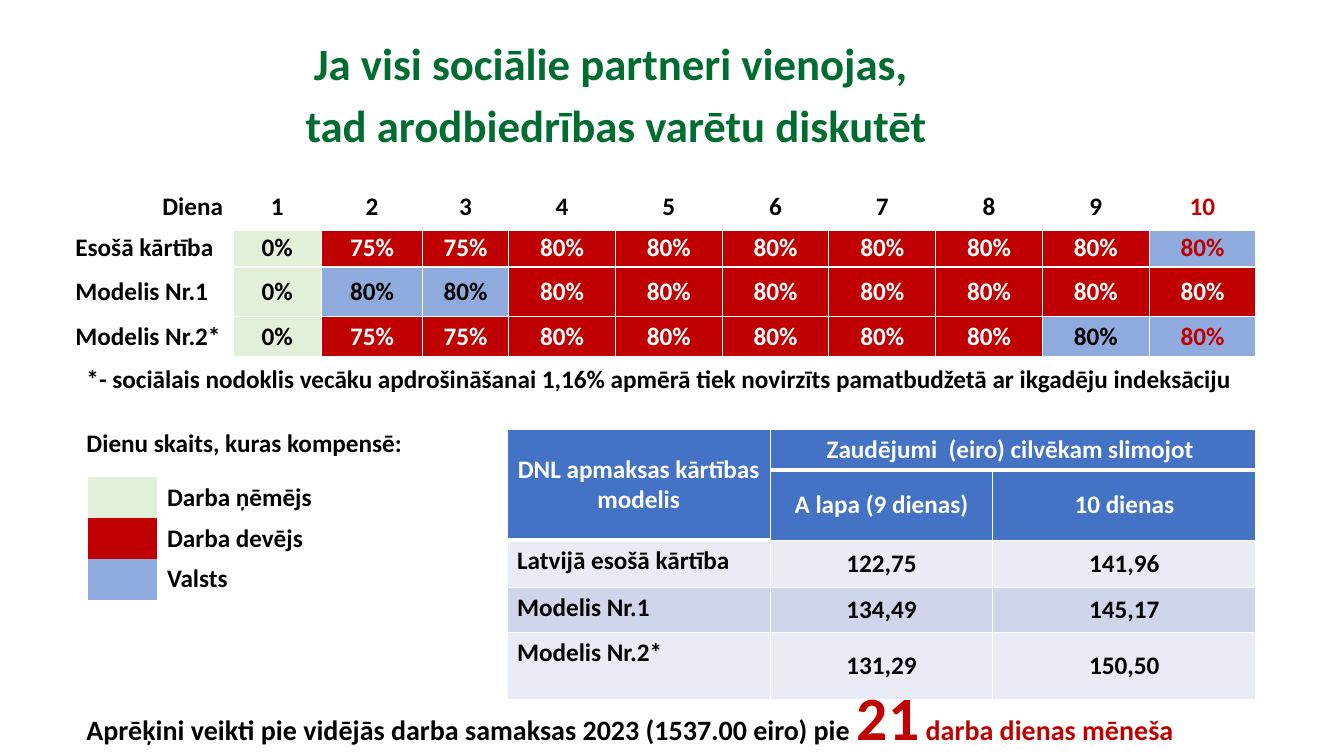
from dataclasses import dataclass

from lxml import etree
from pptx import Presentation
from pptx.dml.color import RGBColor
from pptx.enum.text import MSO_ANCHOR, PP_ALIGN
from pptx.oxml.ns import qn
from pptx.util import Cm, Pt

LEFT, CENTER, RIGHT = PP_ALIGN.LEFT, PP_ALIGN.CENTER, PP_ALIGN.RIGHT
TOP, MIDDLE = MSO_ANCHOR.TOP, MSO_ANCHOR.MIDDLE
PLAIN = "{2D5ABB26-0587-4C30-8999-92F81FD0307C}"  # table style without grid


@dataclass(frozen=True)
class Theme:
    font: str = "Calibri"
    title: int = 32
    body: int = 18
    note: int = 20
    huge: int = 44
    black: str = "000000"
    white: str = "FFFFFF"
    green: str = "006C31"
    red: str = "C00000"
    mint: str = "E2F0D9"
    sky: str = "8FAADC"
    blue: str = "4472C4"
    pale: str = "E9EBF5"
    band: str = "CFD5EA"


THEME = Theme()


def write(frame, text, size=THEME.body, color=THEME.black, align=LEFT, space=None):
    """Append text to the frame's last paragraph; a line break starts a new one."""
    for index, line in enumerate(text.split("\n")):
        para = frame.add_paragraph() if index else frame.paragraphs[-1]
        para.alignment = align
        if space:
            para.line_spacing = space
        run = para.add_run()
        run.text = line
        font = run.font
        font.name, font.size, font.bold = THEME.font, Pt(size), True
        font.color.rgb = RGBColor.from_string(color)


class Board:
    def __init__(self, slide, theme):
        self.slide, self.theme = slide, theme

    def box(self, left, top, width, height, wrap=True):
        shape = self.slide.shapes.add_textbox(Cm(left), Cm(top), Cm(width), Cm(height))
        shape.text_frame.word_wrap = wrap
        return shape.text_frame

    def table(self, left, top, cols, rows):
        frame = self.slide.shapes.add_table(
            len(rows), len(cols), Cm(left), Cm(top), Cm(sum(cols)), Cm(sum(rows)))
        table = frame.table
        table.first_row = table.horz_banding = False
        table._tbl.tblPr.find(qn("a:tableStyleId")).text = PLAIN
        for col, width in zip(table.columns, cols):
            col.width = Cm(width)
        for row, height in zip(table.rows, rows):
            row.height = Cm(height)
        return table

    def cell(self, cell, text="", fill=None, anchor=MIDDLE, lines=None, **style):
        cell.vertical_anchor = anchor
        cell.margin_left = cell.margin_right = Cm(0.25)
        cell.margin_top = cell.margin_bottom = Cm(0.13 if anchor == TOP else 0.05)
        for side, width in (lines or {}).items():
            self.edge(cell, side, width)
        if fill:
            cell.fill.solid()
            cell.fill.fore_color.rgb = RGBColor.from_string(fill)
        if text:
            write(cell.text_frame, text, **style)

    def edge(self, cell, side, width):
        props = cell._tc.get_or_add_tcPr()
        line = etree.SubElement(props, qn("a:ln" + side), w=str(Pt(width)))
        paint = etree.SubElement(line, qn("a:solidFill"))
        etree.SubElement(paint, qn("a:srgbClr"), val=self.theme.white)


def grid(row, low=1):
    """White cell edges; only the first row has its own top edge."""
    lines = {"L": 1, "R": 1}
    if row == 0:
        lines["T"] = 1
    lines["B"] = low
    return lines


def days(board):
    look = board.theme
    fills = {"g": look.mint, "r": look.red, "b": look.sky}
    rates = [0, 75, 75] + [80] * 7
    models = [
        ("Esošā kārtība", rates, "grrrrrrrrb"),
        ("Modelis Nr.1", [0] + [80] * 9, "gbbrrrrrrr"),
        ("Modelis Nr.2*", rates, "grrrrrrrbb"),
    ]
    table = board.table(1.65, 4.7, [4.22, 2.23, 2.55, 2.17] + [2.69] * 7,
                        [1.07, 0.96, 1.25, 1.0])

    # Day numbers
    for col in range(11):
        board.cell(table.cell(0, col), str(col) if col else "Diena", look.white, TOP,
                   grid(0, 3), align=CENTER if col else RIGHT,
                   color=look.red if col == 10 else look.black)

    # Pay rate per day, filled by who pays
    for row, (name, pay, codes) in enumerate(models, 1):
        board.cell(table.cell(row, 0), name, look.white, lines=grid(row))
        for col, (rate, code) in enumerate(zip(pay, codes), 1):
            if code == "r":
                color = look.white
            else:
                color = look.red if col == 10 else look.black
            board.cell(table.cell(row, col), f"{rate}%", fills[code],
                       lines=grid(row), align=CENTER, color=color)


def legend(board):
    look = board.theme
    payers = [("Darba ņēmējs", look.mint), ("Darba devējs", look.red),
              ("Valsts", look.sky)]
    table = board.table(2.21, 12.02, [1.75, 4.19], [1.03] * 3)
    for row, (name, fill) in enumerate(payers):
        board.cell(table.cell(row, 0), fill=fill)
        board.cell(table.cell(row, 1), name, anchor=TOP)


def losses(board):
    look = board.theme
    table = board.table(12.78, 10.82, [6.63, 5.61, 6.63],
                        [1.02, 1.77, 1.19, 1.13, 1.7])

    # Header with merged cells
    heads = [("DNL apmaksas kārtības modelis", "Zaudējumi  (eiro) cilvēkam slimojot ", ""),
             ("", "A lapa (9 dienas)", "10 dienas")]
    for row, texts in enumerate(heads):
        for col, text in enumerate(texts):
            low = 3 if row == 0 or col == 0 else 1
            board.cell(table.cell(row, col), text, look.blue, lines=grid(row, low),
                       align=CENTER, color=look.white)
    table.cell(0, 0).merge(table.cell(1, 0))
    table.cell(0, 1).merge(table.cell(0, 2))

    # Losses in euro
    sums = [("Latvijā esošā kārtība", "122,75", "141,96"),
            ("Modelis Nr.1", "134,49", "145,17"),
            ("Modelis Nr.2*", "131,29", "150,50")]
    for row, texts in enumerate(sums, 2):
        for col, text in enumerate(texts):
            board.cell(table.cell(row, col), text, look.band if row == 3 else look.pale,
                       MIDDLE if col else TOP, grid(row), align=CENTER if col else LEFT)


def main():
    deck = Presentation()
    deck.slide_width, deck.slide_height = Cm(33.87), Cm(19.05)
    board = Board(deck.slides.add_slide(deck.slide_layouts[6]), THEME)

    # Title
    write(board.box(3.02, 0.58, 25.02, 3.3),
          "Ja visi sociālie partneri vienojas, \ntad arodbiedrības varētu diskutēt",
          size=THEME.title, color=THEME.green, align=CENTER, space=1.15)

    # Tables
    days(board)
    legend(board)
    losses(board)

    # Notes
    write(board.box(1.93, 9.04, 30.99, 1.03),
          "*- sociālais nodoklis vecāku apdrošināšanai 1,16% apmērā tiek novirzīts "
          "pamatbudžetā ar ikgadēju indeksāciju")
    write(board.box(1.93, 10.64, 8.53, 1.03, wrap=False), "Dienu skaits, kuras kompensē:")
    foot = board.box(1.93, 16.99, 29.24, 2.13)
    write(foot, "Aprēķini veikti pie vidējās darba samaksas 2023 (1537.00 eiro) pie ",
          size=THEME.note)
    write(foot, "21", size=THEME.huge, color=THEME.red)
    write(foot, " darba dienas mēneša", size=THEME.note, color=THEME.red)

    deck.save("out.pptx")


if __name__ == "__main__":
    main()
